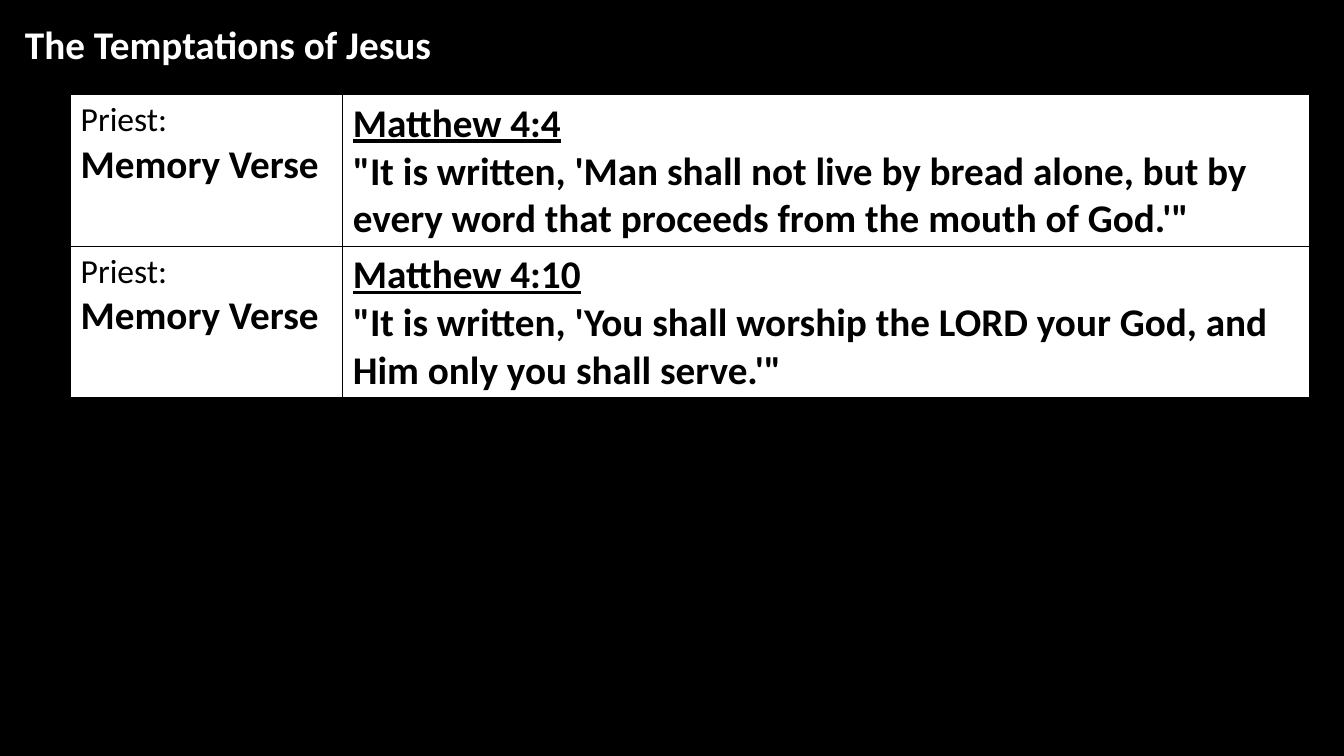
from lxml.etree import SubElement
from pptx import Presentation
from pptx.dml.color import RGBColor
from pptx.enum.text import MSO_AUTO_SIZE
from pptx.oxml.ns import qn
from pptx.util import Cm, Pt

COLORS = {"black": "000000", "white": "FFFFFF"}
VERSES = [
    ("Matthew 4:4",
     "\"It is written, 'Man shall not live by bread alone, but by every word "
     "that proceeds from the mouth of God.'\""),
    ("Matthew 4:10",
     "\"It is written, 'You shall worship the LORD your God, and Him only "
     "you shall serve.'\""),
]


class VerseSlide:
    """Style and current slide, with a method for each kind of element."""

    font = "Calibri"
    size = 28

    def __init__(self, slide):
        self.slide = slide

    def color(self, name):
        return RGBColor.from_string(COLORS[name])

    def paint(self, fill, name):
        fill.solid()
        fill.fore_color.rgb = self.color(name)

    def background(self, name):
        self.paint(self.slide.background.fill, name)

    def style(self, paragraph, color, size=size, bold=True, underline=False):
        for run in paragraph.runs:
            run.font.name = self.font
            run.font.size = Pt(size)
            run.font.bold = bold
            run.font.underline = underline
            run.font.color.rgb = self.color(color)

    def title(self, text, left, top, width, height):
        frame = self.slide.shapes.add_textbox(
            Cm(left), Cm(top), Cm(width), Cm(height)).text_frame
        frame.word_wrap = True
        frame.auto_size = MSO_AUTO_SIZE.SHAPE_TO_FIT_TEXT
        frame.text = text
        self.style(frame.paragraphs[0], "white")

    def borders(self, cell, name):
        properties = cell._tc.get_or_add_tcPr()
        for position, side in enumerate(("lnL", "lnR", "lnT", "lnB")):
            line = SubElement(properties, qn(f"a:{side}"), w=str(Pt(1)))
            fill = SubElement(line, qn("a:solidFill"))
            SubElement(fill, qn("a:srgbClr"), val=COLORS[name])
            properties.insert(position, line)

    def cell(self, cell, heading, body, **heading_style):
        cell.text_frame.text = f"{heading}\n{body}"
        first, second = cell.text_frame.paragraphs
        self.style(first, "black", **heading_style)
        self.style(second, "black")
        self.paint(cell.fill, "white")
        self.borders(cell, "black")

    def verse_table(self, verses, left, top, widths, row_height):
        table = self.slide.shapes.add_table(
            len(verses), len(widths), Cm(left), Cm(top),
            Cm(sum(widths)), Cm(row_height * len(verses))).table
        table.first_row = table.horz_banding = False
        for column, width in zip(table.columns, widths):
            column.width = Cm(width)
        for row, (reference, verse) in zip(table.rows, verses):
            label, passage = row.cells
            self.cell(label, "Priest:", "Memory Verse", size=24, bold=False)
            self.cell(passage, reference, verse, underline=True)


def main():
    deck = Presentation()
    deck.slide_width, deck.slide_height = Cm(33.87), Cm(19.05)
    page = VerseSlide(deck.slides.add_slide(deck.slide_layouts[6]))
    page.background("black")
    page.title("The Temptations of Jesus", 0.38, 0.38, 29.62, 1.45)
    page.verse_table(VERSES, 1.78, 2.39, (6.86, 24.36), 3.81)
    deck.save("out.pptx")


if __name__ == "__main__":
    main()
